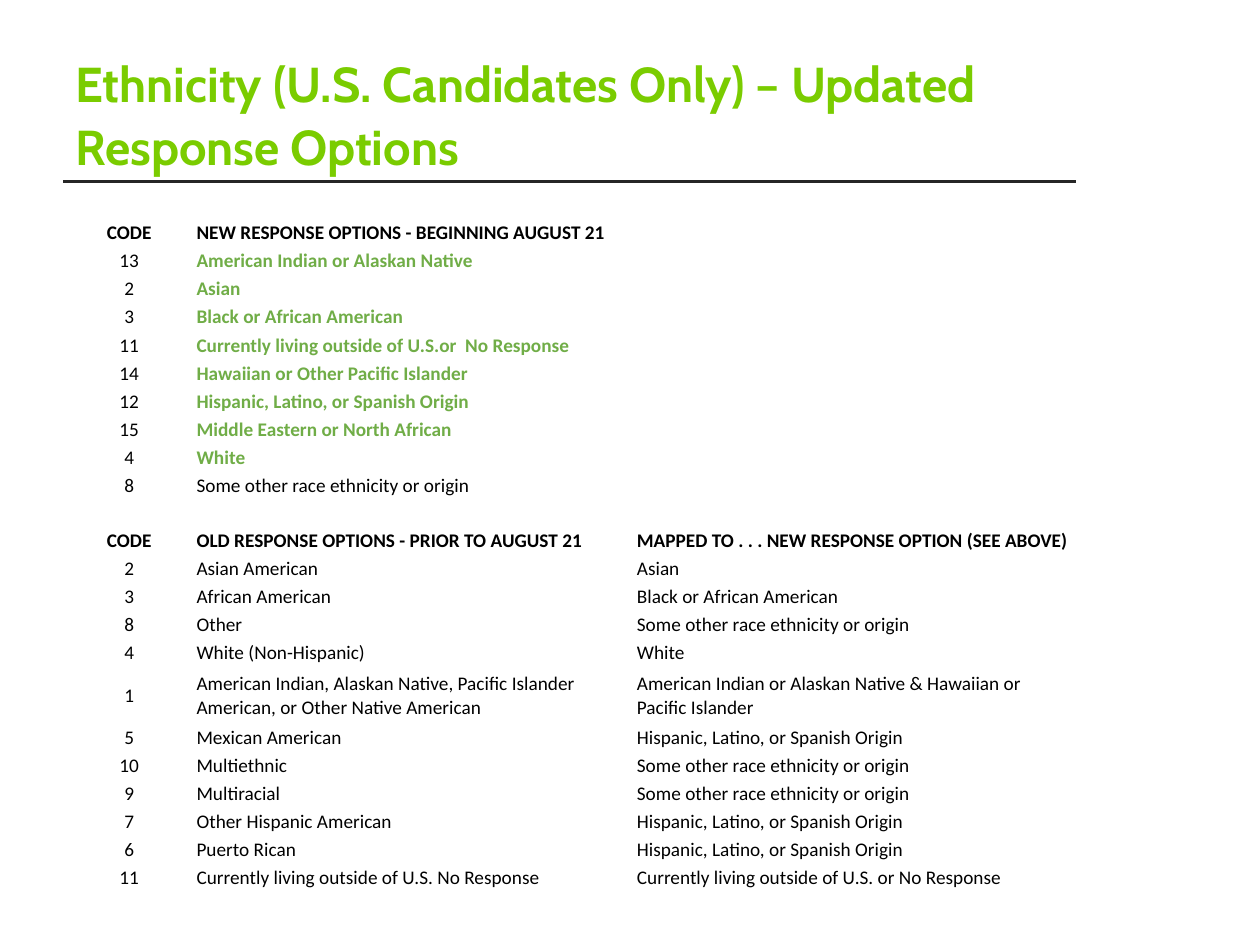
"""Build the slide that maps old ethnicity codes to the updated ones."""
from typing import NamedTuple

from lxml.etree import SubElement
from pptx import Presentation
from pptx.dml.color import RGBColor as Rgb
from pptx.enum.shapes import MSO_CONNECTOR as Link
from pptx.enum.text import MSO_ANCHOR as Anchor, MSO_AUTO_SIZE as Fit, PP_ALIGN as Align
from pptx.oxml.ns import qn
from pptx.util import Inches, Pt

LIME = Rgb(0x7A, 0xCC, 0x00)
GREEN = Rgb(0x70, 0xAD, 0x47)
BLACK = Rgb(0, 0, 0)
DARK = Rgb(0x26, 0x26, 0x26)

LEFT, WIDTH = Inches(0.5), Inches(8.04)
HEAD_TOP, HEAD_H = Inches(0.35), Inches(1.09)
GRID_TOP, ROW_H = Inches(1.72), Inches(5.36) // 24
CODE_W = Inches(1.05)
PAD = Inches(0.01)
SIZE = Pt(11)


class Row(NamedTuple):
    """One line of the table."""
    code: str = ""
    name: str = ""
    goal: str = ""
    bold: bool = False
    tint: Rgb = BLACK
    span: int = 1


def fresh(code: str, name: str) -> Row:
    """Return a row for a newly worded option."""
    return Row(code, name, tint=GREEN)


OTHER = "Some other race ethnicity or origin"
LATIN = "Hispanic, Latino, or Spanish Origin"
BLACK_AM = "Black or African American"

NEW = [
    Row("CODE", "NEW RESPONSE OPTIONS - BEGINNING AUGUST 21", bold=True),
    fresh("13", "American Indian or Alaskan Native"),
    fresh("2", "Asian"),
    fresh("3", BLACK_AM),
    fresh("11", "Currently living outside of U.S.or  No Response"),
    fresh("14", "Hawaiian or Other Pacific Islander"),
    fresh("12", LATIN),
    fresh("15", "Middle Eastern or North African"),
    fresh("4", "White"),
    Row("8", OTHER),
]
OLD = [
    Row("CODE", "OLD RESPONSE OPTIONS - PRIOR TO AUGUST 21",
        "MAPPED TO . . . NEW RESPONSE OPTION (SEE ABOVE)", bold=True),
    Row("2", "Asian American", "Asian"),
    Row("3", "African American", BLACK_AM),
    Row("8", "Other", OTHER),
    Row("4", "White (Non-Hispanic)", "White"),
    Row("1", "American Indian, Alaskan Native, Pacific Islander American, or Other Native American",
        "American Indian or Alaskan Native & Hawaiian or Pacific Islander", span=2),
    Row("5", "Mexican American", LATIN),
    Row("10", "Multiethnic", OTHER),
    Row("9", "Multiracial", OTHER),
    Row("7", "Other Hispanic American", LATIN),
    Row("6", "Puerto Rican", LATIN),
    Row("11", "Currently living outside of U.S. No Response",
        "Currently living outside of U.S. or No Response"),
]


def write(para, text: str, face: str, size: Pt, tint: Rgb, bold: bool) -> None:
    """Add one styled run to a paragraph."""
    run = para.add_run()
    run.text = text
    font = run.font
    font.name, font.size, font.bold = face, size, bold
    font.color.rgb = tint


def draw_rule(slide) -> None:
    """Draw the line below the title."""
    y = HEAD_TOP + HEAD_H
    rule = slide.shapes.add_connector(Link.STRAIGHT, LEFT, y, LEFT + WIDTH, y)
    rule.line.color.rgb = DARK
    rule.line.width = Pt(1.5)
    SubElement(rule.element.spPr, qn("a:effectLst"))


def draw_title(slide, text: str) -> None:
    """Place and fill the title."""
    title = slide.shapes.title
    title.left, title.top, title.width, title.height = LEFT, HEAD_TOP, WIDTH, HEAD_H
    frame = title.text_frame
    frame.word_wrap = True
    frame.auto_size = Fit.NONE
    frame.vertical_anchor = Anchor.BOTTOM
    para = frame.paragraphs[0]
    para.alignment = Align.LEFT
    para.line_spacing = Pt(36)
    write(para, text, "Cabin", Pt(28), LIME, True)


def fill_cell(cell, text: str, col: int, row: Row, anchor: Anchor) -> None:
    """Format a cell and write its text."""
    cell.fill.background()
    cell.margin_left = cell.margin_right = cell.margin_top = PAD
    cell.margin_bottom = 0
    cell.vertical_anchor = anchor
    para = cell.text_frame.paragraphs[0]
    para.alignment = Align.LEFT if col else Align.CENTER
    if text:
        write(para, text, "Calibri", SIZE, row.tint if col else BLACK,
              row.bold)
        if col and row.tint == GREEN:
            para.runs[0].font.bold = True
    else:
        SubElement(para._p, qn("a:endParaRPr")).set("sz", str(int(SIZE.pt * 100)))


def draw_table(slide, rows: list[Row]) -> None:
    """Draw both code lists as one table."""
    high = ROW_H * sum(row.span for row in rows)
    table = slide.shapes.add_table(len(rows), 3, LEFT, GRID_TOP, WIDTH, high).table
    table.first_row = table.horz_banding = False
    rest = (WIDTH - CODE_W) // 2
    for col, wide in zip(table.columns, (CODE_W, rest, rest)):
        col.width = wide
    for i, row in enumerate(rows):
        table.rows[i].height = ROW_H * row.span
        anchor = Anchor.BOTTOM if i < len(NEW) else Anchor.MIDDLE
        for j, text in enumerate((row.code, row.name, row.goal)):
            fill_cell(table.cell(i, j), text, j, row, anchor)


def main() -> None:
    """Build and save the deck."""
    deck = Presentation()
    deck.slide_width, deck.slide_height = Inches(10), Inches(7.5)
    slide = deck.slides.add_slide(deck.slide_layouts[5])
    draw_rule(slide)
    draw_title(slide, "Ethnicity (U.S. Candidates Only) – Updated Response Options")
    draw_table(slide, NEW + [Row()] + OLD)
    deck.save("out.pptx")


if __name__ == "__main__":
    main()
